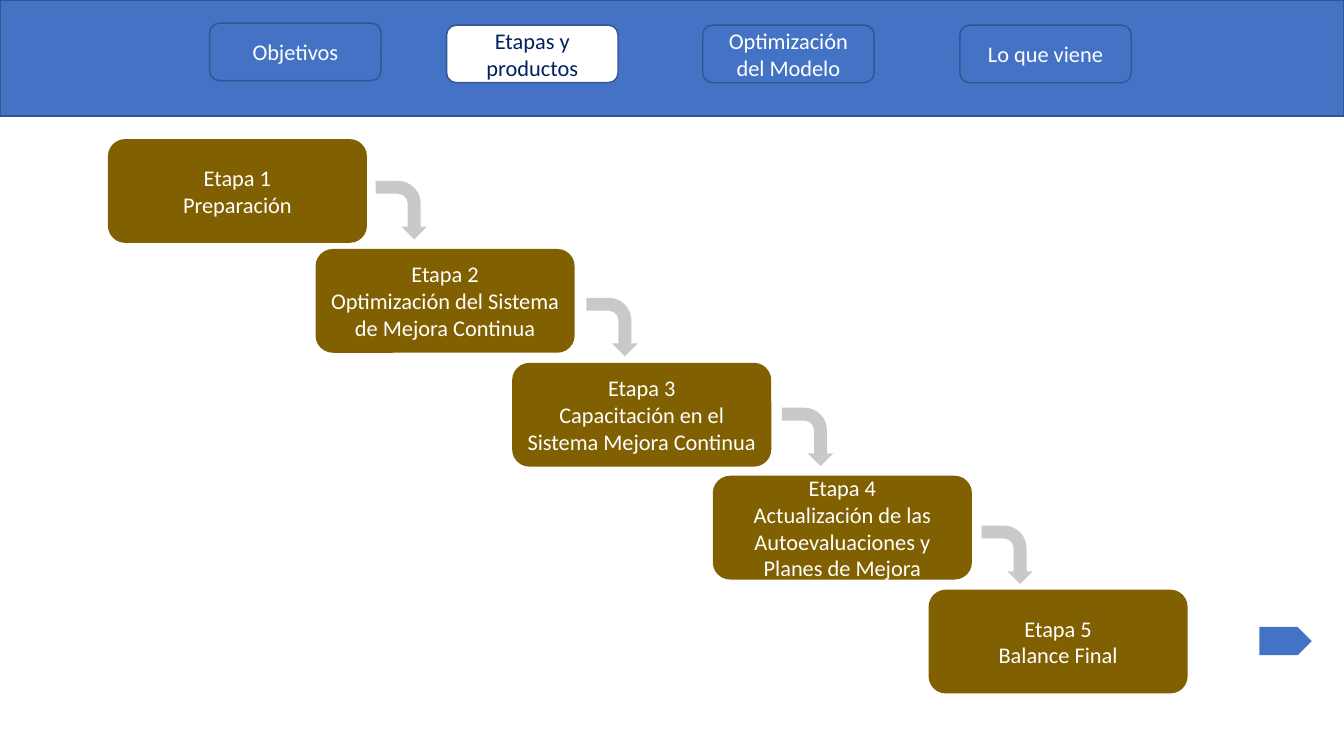
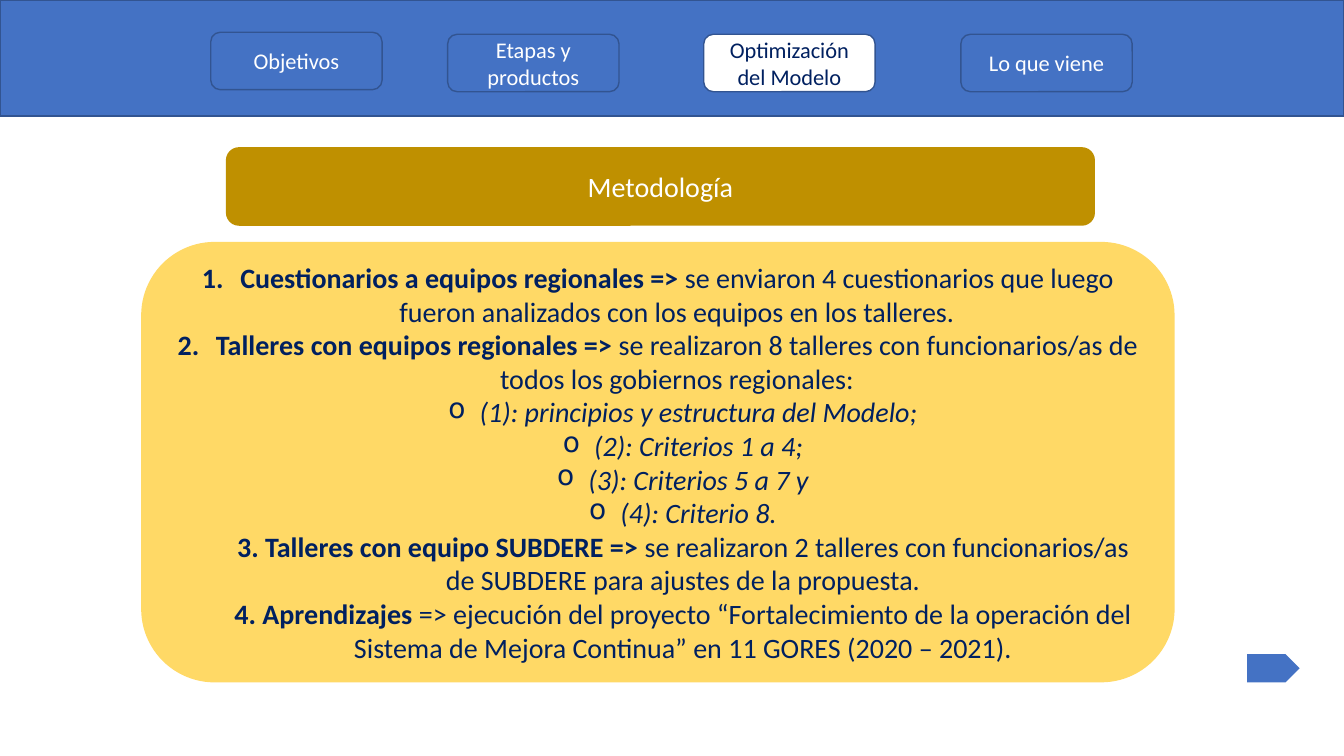
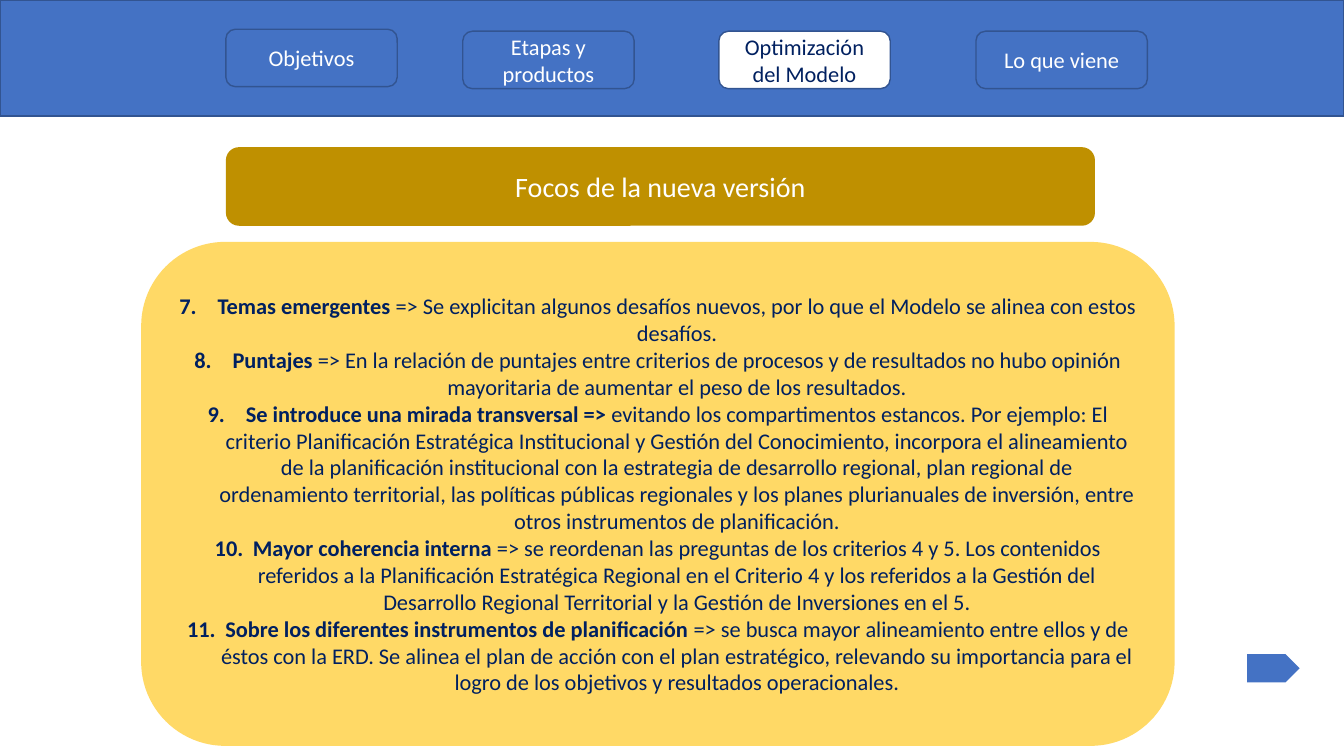
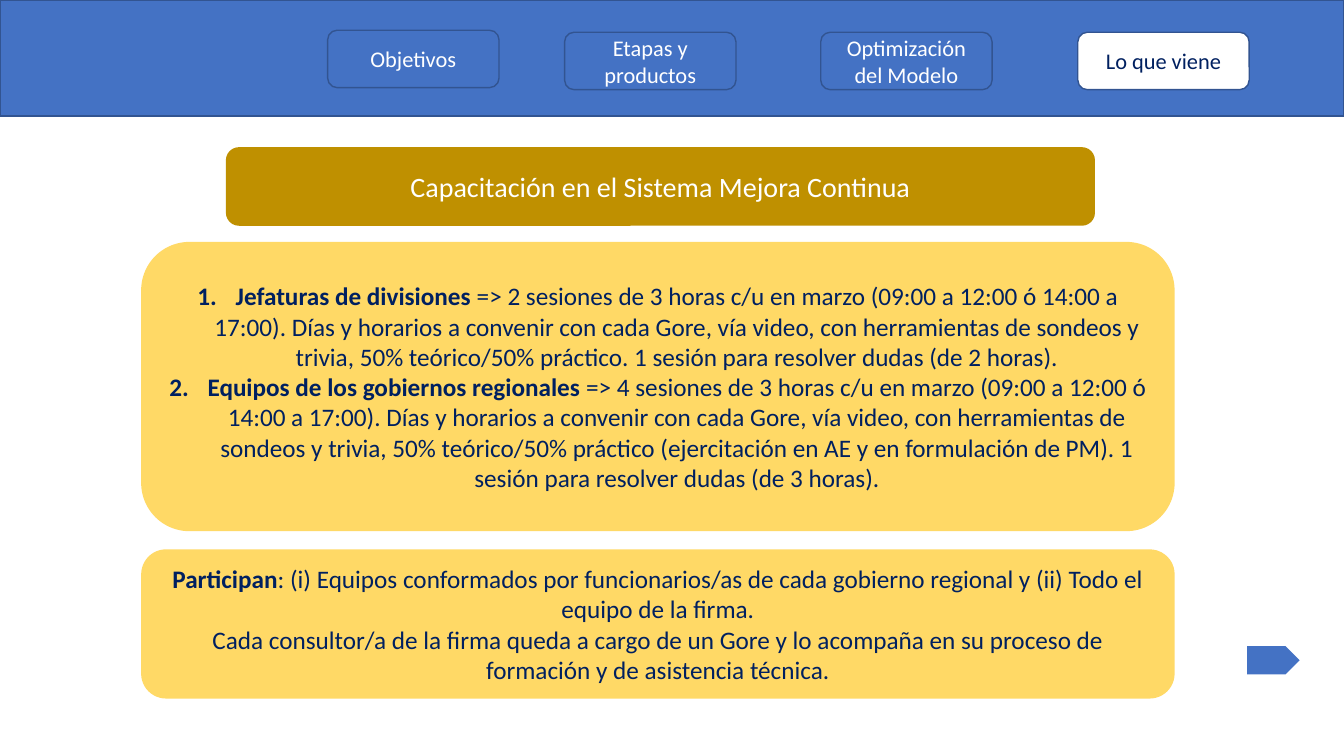
"""Build four slides on the stages, methodology and training of an improvement system."""
from dataclasses import dataclass
from typing import Optional

from lxml import etree
from pptx import Presentation
from pptx.dml.color import RGBColor
from pptx.enum.shapes import MSO_SHAPE
from pptx.enum.text import MSO_ANCHOR, PP_ALIGN
from pptx.oxml.ns import qn
from pptx.util import Inches, Pt

RECT = MSO_SHAPE.RECTANGLE
ROUND = MSO_SHAPE.ROUNDED_RECTANGLE
BENT_ARROW = MSO_SHAPE.BENT_ARROW
PENTAGON = MSO_SHAPE.PENTAGON
MIDDLE = MSO_ANCHOR.MIDDLE
CENTER = PP_ALIGN.CENTER

FONT = "Calibri"
COLORS = {
    "blue": "4472C4",
    "outline": "325491",
    "navy": "002060",
    "white": "FFFFFF",
    "brown": "806000",
    "gold": "BF9000",
    "yellow": "FFD966",
    "gray": "C9C9C9",
}
TABS = ["Objetivos", "Etapas y productos", "Optimización del Modelo", "Lo que viene"]
TAB_OFFSETS = [0, 2.35, 4.89, 7.44]
FIRST_TAB_RISE = 0.02


@dataclass
class Box:
    left: float
    top: float
    width: float
    height: float


@dataclass
class Item:
    lead: str = ""
    rest: str = ""
    kind: str = "plain"


@dataclass
class Panel:
    top: float
    height: float
    size: int
    items: list[Item]
    start: int = 1


@dataclass
class Step:
    left: float
    top: float
    text: str
    arrow: Optional[tuple[float, float]] = None


@dataclass
class Page:
    active: int
    tabs_at: tuple[float, float]
    next_at: tuple[float, float]
    title: str = ""
    panels: tuple[Panel, ...] = ()
    steps: tuple[Step, ...] = ()


@dataclass
class Indent:
    left: float
    hanging: float
    level: int


INDENTS = {
    "number": Indent(0.38, 0.38, 0),
    "sub": Indent(0.81, 0.31, 1),
    "indented": Indent(0.5, 0, 1),
}

STEPS = (
    Step(1.07, 1.38, "Preparación", (3.69, 1.83)),
    Step(3.13, 2.47, "Optimización del Sistema de Mejora Continua", (5.78, 2.99)),
    Step(5.08, 3.6, "Capacitación en el Sistema Mejora Continua", (7.72, 4.08)),
    Step(7.07, 4.72, "Actualización de las Autoevaluaciones y Planes de Mejora", (9.7, 5.25)),
    Step(9.21, 5.85, "Balance Final"),
)

METHOD = Panel(2.4, 4.37, 20, [
    Item("Cuestionarios a equipos regionales =>",
         " se enviaron 4 cuestionarios que luego fueron analizados con los equipos "
         "en los talleres.", "number"),
    Item("Talleres con equipos regionales => ",
         "se realizaron 8 talleres con funcionarios/as de todos los gobiernos regionales:",
         "number"),
    Item(rest="(1): principios y estructura del Modelo;", kind="sub"),
    Item(rest="(2): Criterios 1 a 4;", kind="sub"),
    Item(rest="(3): Criterios 5 a 7 y", kind="sub"),
    Item(rest="(4): Criterio 8.", kind="sub"),
    Item("3. Talleres con equipo SUBDERE => ",
         "se realizaron 2 talleres con funcionarios/as de SUBDERE para ajustes de la "
         "propuesta.", "indented"),
    Item("4. Aprendizajes",
         " => ejecución del proyecto “Fortalecimiento de la operación del Sistema de "
         "Mejora Continua” en 11 GORES (2020 – 2021).", "indented"),
])

FOCUS = Panel(2.4, 5, 16, [
    Item("Temas emergentes ",
         "=> Se explicitan algunos desafíos nuevos, por lo que el Modelo se alinea con "
         "estos desafíos.", "number"),
    Item("Puntajes",
         " => En la relación de puntajes entre criterios de procesos y de resultados no "
         "hubo opinión mayoritaria de aumentar el peso de los resultados.", "number"),
    Item("Se introduce una mirada transversal => ",
         "evitando los compartimentos estancos. Por ejemplo: El criterio Planificación "
         "Estratégica Institucional y Gestión del Conocimiento, incorpora el alineamiento "
         "de la planificación institucional con la estrategia de desarrollo regional, plan "
         "regional de ordenamiento territorial, las políticas públicas regionales y los "
         "planes plurianuales de inversión, entre otros instrumentos de planificación.",
         "number"),
    Item("Mayor coherencia interna ",
         "=> se reordenan las preguntas de los criterios 4 y 5. Los contenidos referidos a "
         "la Planificación Estratégica Regional en el Criterio 4 y los referidos a la "
         "Gestión del Desarrollo Regional Territorial y la Gestión de Inversiones en el 5.",
         "number"),
    Item("Sobre los diferentes instrumentos de planificación",
         " => se busca mayor alineamiento entre ellos y de éstos con la ERD. Se alinea el "
         "plan de acción con el plan estratégico, relevando su importancia para el logro "
         "de los objetivos y resultados operacionales.", "number"),
], start=7)

SCHEDULE = (
    "sesiones de 3 horas c/u en marzo (09:00 a 12:00 ó 14:00 a 17:00). Días y horarios a "
    "convenir con cada Gore, vía video, con herramientas de sondeos y trivia, "
    "50% teórico/50% práctico"
)
TRAINING = Panel(2.4, 2.87, 18, [
    Item("Jefaturas de divisiones ",
         f"=> 2 {SCHEDULE}. 1 sesión para resolver dudas (de 2 horas).", "number"),
    Item("Equipos de los gobiernos regionales ",
         f"=> 4 {SCHEDULE} (ejercitación en AE y en formulación de PM). 1 sesión para "
         "resolver dudas (de 3 horas).", "number"),
])
PARTICIPANTS = Panel(5.45, 1.48, 18, [
    Item("Participan",
         ": (i) Equipos conformados por funcionarios/as de cada gobierno regional y "
         "(ii) Todo el equipo de la firma."),
    Item(rest="Cada consultor/a de la firma queda a cargo de un Gore y lo acompaña en su "
              "proceso de formación y de asistencia técnica."),
])

PAGES = (
    Page(1, (2.08, 0.25), (12.49, 6.22), steps=STEPS),
    Page(2, (2.09, 0.34), (12.37, 6.49), "Metodología", (METHOD,)),
    Page(2, (2.24, 0.31), (12.37, 6.49), "Focos de la nueva versión", (FOCUS,)),
    Page(3, (3.25, 0.32), (12.37, 6.41), "Capacitación en el Sistema Mejora Continua",
         (TRAINING, PARTICIPANTS)),
)


def rgb(name: str) -> RGBColor:
    """Return the named colour."""
    return RGBColor.from_string(COLORS[name])


def add_box(s, kind, box: Box, fill: str, line: str = ""):
    """Draw a flat preset shape with an optional thin outline."""
    sp = s.shapes.add_shape(kind, Inches(box.left), Inches(box.top),
                            Inches(box.width), Inches(box.height))
    sp.shadow.inherit = False
    sp.fill.solid()
    sp.fill.fore_color.rgb = rgb(fill)
    if line:
        sp.line.color.rgb = rgb(line)
        sp.line.width = Pt(1)
    else:
        sp.line.fill.background()
    return sp


def style_run(r, size: int, color: str, bold: bool = False, italic: bool = False) -> None:
    """Set the font of a run."""
    r.font.name = FONT
    r.font.size = Pt(size)
    r.font.color.rgb = rgb(color)
    r.font.bold = bold
    r.font.italic = italic


def set_label(sp, text: str, size: int, color: str) -> None:
    """Write centred text, one paragraph per line."""
    tf = sp.text_frame
    tf.text = text
    tf.vertical_anchor = MIDDLE
    for p in tf.paragraphs:
        p.alignment = CENTER
        for r in p.runs:
            style_run(r, size, color)


def set_indent(p, kind: str, start: int) -> None:
    """Give a paragraph its indent and its number or bullet."""
    indent = INDENTS[kind]
    p.level = indent.level
    pPr = p._p.get_or_add_pPr()
    pPr.set("marL", str(Inches(indent.left)))
    pPr.set("indent", str(-Inches(indent.hanging)))
    if kind == "number":
        number = etree.SubElement(pPr, qn("a:buAutoNum"), type="arabicPeriod")
        if start > 1:
            number.set("startAt", str(start))
    elif kind == "sub":
        etree.SubElement(pPr, qn("a:buChar"), char="o")


def add_panel(s, panel: Panel) -> None:
    """Draw a yellow panel with its list of items."""
    sp = add_box(s, ROUND, Box(1.4, panel.top, 10.25, panel.height), "yellow")
    tf = sp.text_frame
    tf.vertical_anchor = MIDDLE
    for i, item in enumerate(panel.items):
        p = tf.add_paragraph() if i else tf.paragraphs[0]
        if item.kind in INDENTS:
            set_indent(p, item.kind, panel.start)
        p.alignment = CENTER
        for text, bold in ((item.lead, True), (item.rest, False)):
            if text:
                r = p.add_run()
                r.text = text
                style_run(r, panel.size, "navy", bold, item.kind == "sub")


def add_tabs(s, page: Page) -> None:
    """Draw the navigation tabs and highlight the active one."""
    left, top = page.tabs_at
    for i, (text, offset) in enumerate(zip(TABS, TAB_OFFSETS)):
        active = i == page.active
        tab_top = top if i else top - FIRST_TAB_RISE
        sp = add_box(s, ROUND, Box(left + offset, tab_top, 1.7, 0.57),
                     "white" if active else "blue", "outline")
        set_label(sp, text, 16, "navy" if active else "white")


def add_steps(s, steps: tuple[Step, ...]) -> None:
    """Draw the staircase of stages and the arrows between them."""
    for number, step in enumerate(steps, 1):
        sp = add_box(s, ROUND, Box(step.left, step.top, 2.57, 1.03), "brown")
        set_label(sp, f"Etapa {number}\n{step.text}", 16, "white")
        if step.arrow:
            arrow = add_box(s, BENT_ARROW, Box(*step.arrow, 0.58, 0.51), "gray")
            arrow.rotation = 90


def add_page(prs, page: Page) -> None:
    """Add one slide with its band, tabs, content and forward button."""
    s = prs.slides.add_slide(prs.slide_layouts[6])
    add_box(s, RECT, Box(0, 0, 13.33, 1.15), "blue", "outline")
    if page.title:
        sp = add_box(s, ROUND, Box(2.24, 1.46, 8.62, 0.78), "gold")
        set_label(sp, page.title, 20, "white")
    for panel in page.panels:
        add_panel(s, panel)
    add_steps(s, page.steps)
    add_tabs(s, page)
    add_box(s, PENTAGON, Box(*page.next_at, 0.52, 0.28), "blue")


def main() -> None:
    """Build and save the presentation."""
    prs = Presentation()
    prs.slide_width = Inches(13.33)
    prs.slide_height = Inches(7.5)
    for page in PAGES:
        add_page(prs, page)
    prs.save("out.pptx")


if __name__ == "__main__":
    main()
